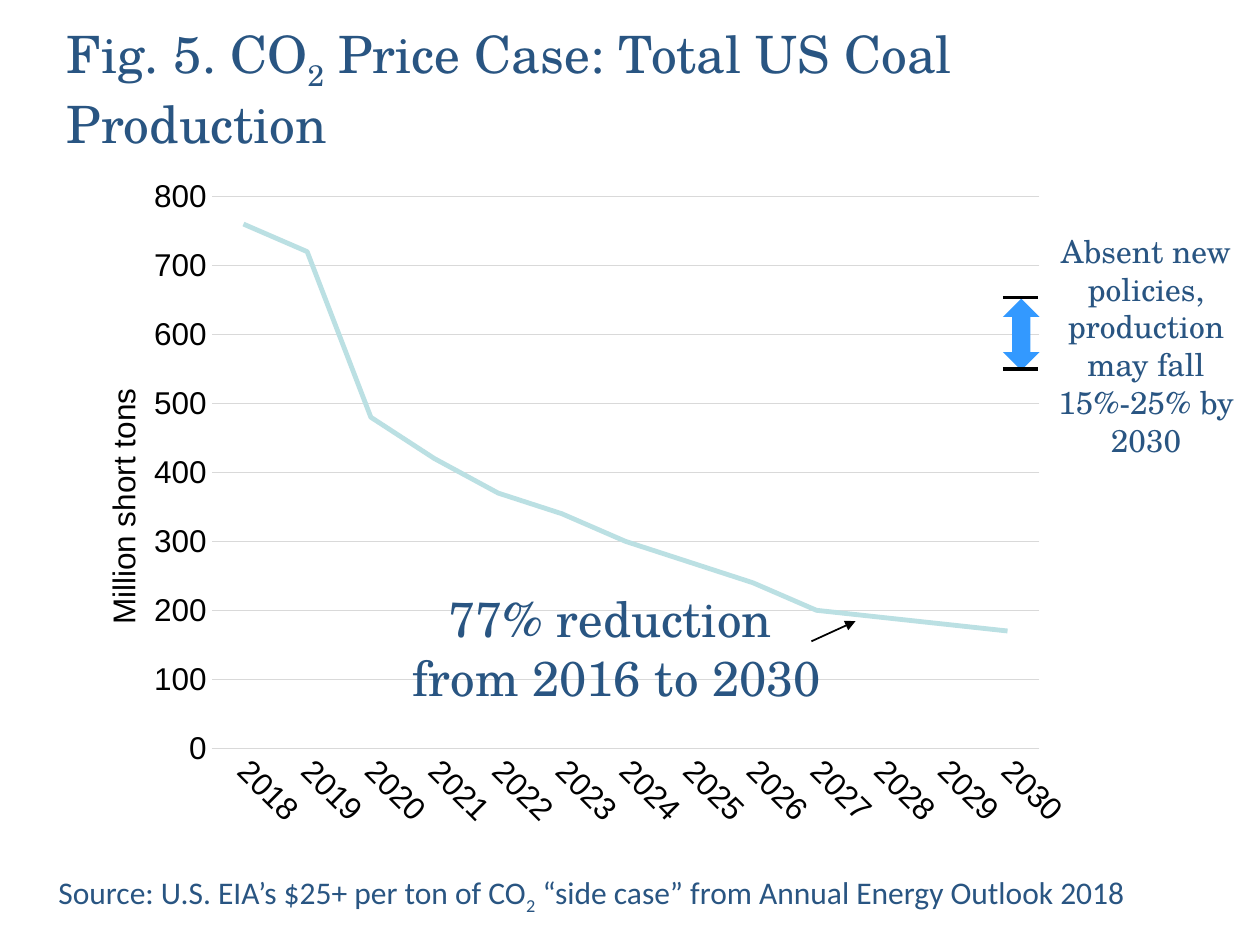
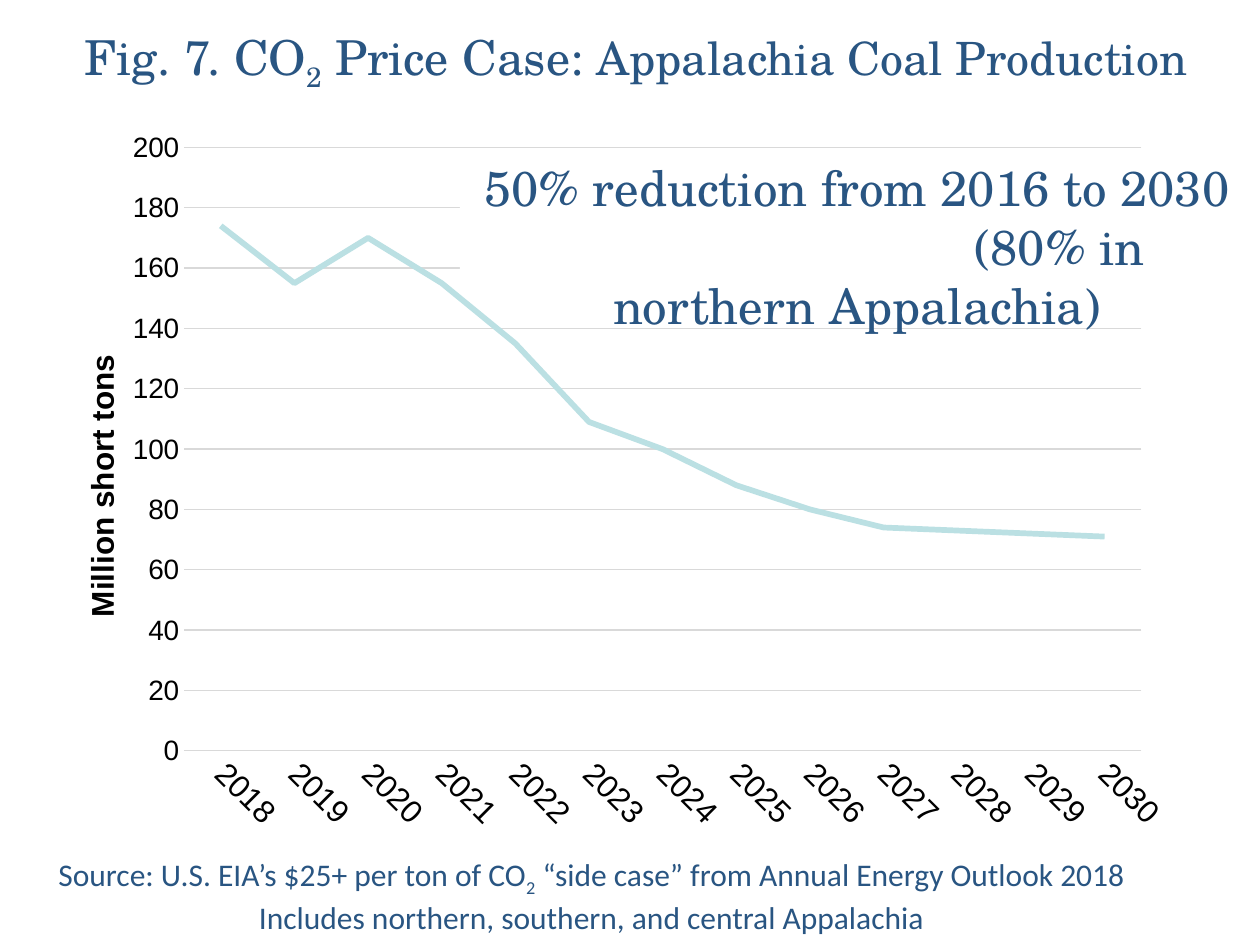
from dataclasses import dataclass

from lxml import etree
from pptx import Presentation
from pptx.chart.data import CategoryChartData
from pptx.dml.color import RGBColor
from pptx.enum.chart import XL_CHART_TYPE, XL_MARKER_STYLE, XL_TICK_MARK
from pptx.enum.shapes import MSO_CONNECTOR, MSO_SHAPE
from pptx.enum.text import MSO_ANCHOR, PP_ALIGN
from pptx.oxml.ns import qn
from pptx.util import Emu, Pt

LINE = XL_CHART_TYPE.LINE
NO_MARK = XL_MARKER_STYLE.NONE
NO_TICK = XL_TICK_MARK.NONE
STRAIGHT = MSO_CONNECTOR.STRAIGHT
ARROW = MSO_SHAPE.UP_DOWN_ARROW
TOP, MIDDLE = MSO_ANCHOR.TOP, MSO_ANCHOR.MIDDLE
LEFT, CENTER = PP_ALIGN.LEFT, PP_ALIGN.CENTER

SCALE = 9144
NAVY, BLACK, WHITE = "295582", "000000", "FFFFFF"
GRID, TEAL, BLUE = "D9D9D9", "BBE0E3", "3399FF"
SERIF, SANS, PLAIN = "TeX Gyre Schola", "Calibri", "Arial"
YEARS = [str(year) for year in range(2018, 2031)]


@dataclass
class Box:
    left: int
    top: int
    width: int
    height: int


@dataclass
class Piece:
    text: str
    sub: bool = False
    size: float | None = None


@dataclass
class Row:
    pieces: list[Piece]
    indent: int = 0


@dataclass
class Note:
    box: Box
    rows: list[Row]
    size: float
    face: str = SERIF
    align: int = CENTER
    anchor: int = TOP
    inset: tuple[int, int] = (10, 5)
    wrap: bool = True
    fill: str | None = None


@dataclass
class Rule:
    start: tuple[int, int]
    end: tuple[int, int]
    weight: float
    head: bool = False


@dataclass
class Graph:
    box: Box
    plot: Box
    label: tuple[int, int]
    values: list[int]
    top: int
    step: int
    size: int
    weight: float
    bold: bool


def px(value: int) -> Emu:
    return Emu(value * SCALE)


def frame(box: Box) -> tuple[Emu, ...]:
    return px(box.left), px(box.top), px(box.width), px(box.height)


def color(code: str) -> RGBColor:
    return RGBColor.from_string(code)


def style(font, face: str, size: float, code: str, bold: bool = False) -> None:
    font.name, font.size, font.bold = face, Pt(size), bold
    font.color.rgb = color(code)


def stroke(line, code: str, weight: float) -> None:
    line.color.rgb = color(code)
    line.width = Pt(weight)


def row(text: str, indent: int = 0) -> Row:
    return Row([Piece(text)], indent)


def formula(before: str, *after: Piece) -> Row:
    return Row([Piece(before + "CO"), Piece("2", sub=True), *after])


def add_note(slide, note: Note) -> None:
    shape = slide.shapes.add_textbox(*frame(note.box))
    if note.fill:
        shape.fill.solid()
        shape.fill.fore_color.rgb = color(note.fill)
    body = shape.text_frame
    body.word_wrap = note.wrap
    body.vertical_anchor = note.anchor
    side, edge = note.inset
    body.margin_left = body.margin_right = px(side)
    body.margin_top = body.margin_bottom = px(edge)
    for index, item in enumerate(note.rows):
        para = body.add_paragraph() if index else body.paragraphs[0]
        para.alignment = note.align
        if item.indent:
            para._p.get_or_add_pPr().set("marL", str(px(item.indent)))
        style(para.font, note.face, note.size, NAVY)
        for piece in item.pieces:
            run = para.add_run()
            run.text = piece.text
            if piece.size:
                run.font.size = Pt(piece.size)
            if piece.sub:
                run._r.get_or_add_rPr().set("baseline", "-25000")


def add_title(slide, box: Box, size: float, before: str, *after: Piece) -> None:
    add_note(slide, Note(box, [formula(before, *after)], size,
                         align=LEFT, anchor=MIDDLE, inset=(4, 4)))


def add_source(slide, top: int, *extra: Row) -> None:
    first = formula("Source: U.S. EIA’s $25+ per ton of ",
                    Piece(" “side case” from Annual Energy Outlook 2018"))
    add_note(slide, Note(Box(32, top, 875, 44), [first, *extra], 18, SANS))


def add_rule(slide, rule: Rule) -> None:
    ends = [px(value) for value in (*rule.start, *rule.end)]
    line = slide.shapes.add_connector(STRAIGHT, *ends)
    stroke(line.line, BLACK, rule.weight)
    if rule.head:
        pen = line.line._get_or_add_ln()
        etree.SubElement(pen, qn("a:tailEnd"), type="triangle")
    etree.SubElement(line._element.spPr, qn("a:effectLst"))


def place(host, index: int, marks: dict[str, str | float]) -> None:
    for old in host.findall(qn("c:layout")):
        host.remove(old)
    layout = etree.Element(qn("c:layout"))
    manual = etree.SubElement(layout, qn("c:manualLayout"))
    for name, value in marks.items():
        etree.SubElement(manual, qn(f"c:{name}"), val=str(value))
    host.insert(index, layout)


def add_graph(slide, graph: Graph) -> None:
    data = CategoryChartData()
    data.categories = YEARS
    data.add_series("Series 1", graph.values)
    chart = slide.shapes.add_chart(LINE, *frame(graph.box), data).chart
    chart.has_legend = chart.has_title = False
    style(chart.font, SANS, 10, BLACK)

    series = chart.plots[0].series[0]
    chart.plots[0].vary_by_categories = False
    series.smooth = False
    series.marker.style = NO_MARK
    stroke(series.format.line, TEAL, graph.weight)

    years, tons = chart.category_axis, chart.value_axis
    for axis, size in ((years, 18), (tons, graph.size)):
        axis.major_tick_mark = axis.minor_tick_mark = NO_TICK
        style(axis.tick_labels.font, PLAIN, size, BLACK)
    stroke(years.format.line, GRID, 0.75)
    years._element.txPr.bodyPr.set("rot", "2700000")

    tons.minimum_scale, tons.maximum_scale = 0, graph.top
    tons.major_unit = graph.step
    tons.format.line.fill.background()
    stroke(tons.major_gridlines.format.line, GRID, 0.75)
    if tons._element.find(qn("c:crossBetween")) is None:
        cross = etree.Element(qn("c:crossBetween"), val="between")
        tons._element.find(qn("c:crosses")).addnext(cross)

    label = tons.axis_title
    label.text_frame.text = "Million short tons"
    style(label.text_frame.paragraphs[0].font, PLAIN, 18, BLACK, graph.bold)
    turn = label.text_frame._txBody.bodyPr
    turn.set("rot", "-5400000")
    turn.set("vert", "horz")

    box, plot = graph.box, graph.plot
    left, top = graph.label
    place(label._element, 1, {
        "xMode": "edge", "yMode": "edge",
        "x": (left - box.left) / box.width,
        "y": (top - box.top) / box.height,
    })
    place(chart._chartSpace.chart.plotArea, 0, {
        "layoutTarget": "inner", "xMode": "edge", "yMode": "edge",
        "x": (plot.left - box.left) / box.width,
        "y": (plot.top - box.top) / box.height,
        "w": plot.width / box.width, "h": plot.height / box.height,
    })


def add_range(slide, box: Box) -> None:
    arrow = slide.shapes.add_shape(ARROW, *frame(box))
    arrow.shadow.inherit = False
    arrow.fill.solid()
    arrow.fill.fore_color.rgb = color(BLUE)
    arrow.line.fill.background()
    for level in (box.top - 1, box.top + box.height - 1):
        add_rule(slide, Rule((box.left, level), (box.left + 28, level), 2))


def total(slide) -> None:
    add_title(slide, Box(49, 40, 900, 60), 29.4, "Fig. 5. ",
              Piece(" Price Case: Total US Coal Production"))
    add_source(slide, 688)
    add_graph(slide, Graph(
        Box(49, 131, 816, 537), Box(168, 156, 657, 438), (77, 304),
        [760, 720, 480, 420, 370, 340, 300, 270, 240, 200, 190, 180, 170],
        800, 100, 18, 2.75, False))
    add_note(slide, Note(Box(317, 462, 345, 104),
                         [row("77% reduction "), row("from 2016 to 2030")],
                         28, wrap=False))
    add_note(slide, Note(Box(827, 179, 165, 192), [row(
        "Absent new policies, production may fall 15%-25% by 2030")], 18))
    add_range(slide, Box(796, 237, 29, 57))
    add_rule(slide, Rule((644, 509), (679, 493), 1, True))


def region(slide) -> None:
    add_title(slide, Box(63, 18, 900, 60), 27.5, "Fig. 7. ",
              Piece(" Price Case:"),
              Piece(" Appalachia Coal Production", size=26.2))
    add_source(slide, 674,
               row("Includes northern, southern, and central Appalachia"))
    add_graph(slide, Graph(
        Box(32, 94, 913, 577), Box(146, 117, 760, 479), (60, 277),
        [174, 155, 170, 155, 135, 109, 100, 88, 80, 74, 73, 72, 71],
        200, 20, 16, 3.25, True))
    add_note(slide, Note(Box(365, 120, 630, 104), [
        row("50% reduction from 2016 to 2030"), row("(80% in", 322),
        row("northern Appalachia)")], 28, fill=WHITE))


def main() -> None:
    deck = Presentation()
    deck.slide_width, deck.slide_height = px(1000), px(750)
    for draw in (total, region):
        draw(deck.slides.add_slide(deck.slide_layouts[6]))
    deck.save("out.pptx")


if __name__ == "__main__":
    main()
